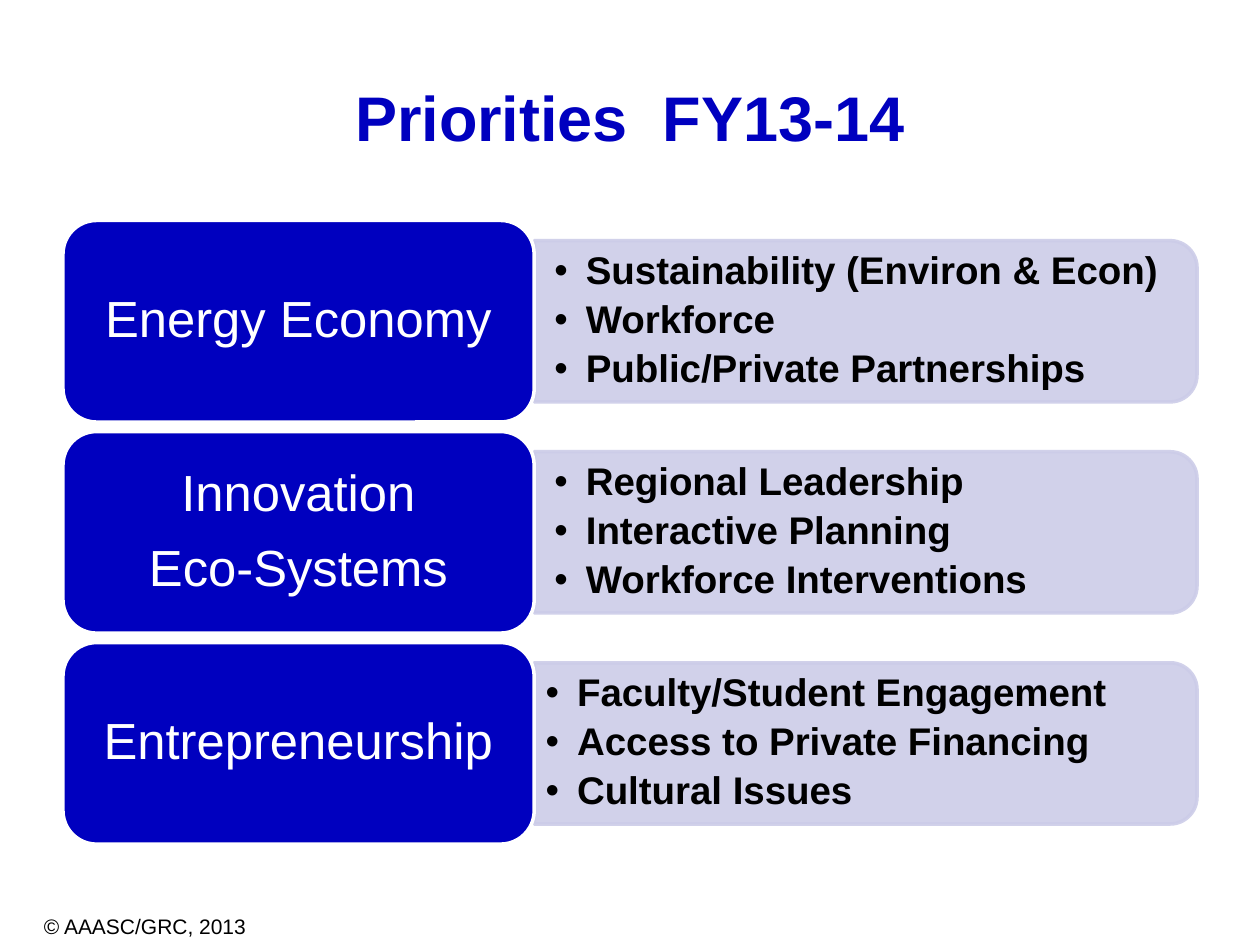
from pptx import Presentation
from pptx.dml.color import RGBColor
from pptx.enum.shapes import MSO_SHAPE as Preset
from pptx.enum.text import MSO_ANCHOR as Anchor, PP_ALIGN as Align
from pptx.oxml.ns import qn
from pptx.util import Inches, Pt
from lxml.etree import SubElement

BLUE, LILAC, WHITE, BLACK = "0000BF", "CCCCE8", "FFFFFF", "000000"
FIRST_TOP, PITCH = 1.75, 1.675
LABEL_LEFT, LABEL_WIDTH, LABEL_HEIGHT = 0.5, 3.74, 1.6
PANEL_WIDTH, PANEL_HEIGHT = 5.26, 1.28

PRIORITIES = [
    (["Energy Economy"],
     ["Sustainability (Environ & Econ)", "Workforce", "Public/Private Partnerships"],
     (0.16, 0.08)),
    (["Innovation", "Eco-Systems"],
     ["Regional Leadership", "Interactive Planning", "Workforce Interventions"],
     (0.16, 0.08)),
    (["Entrepreneurship"],
     ["Faculty/Student Engagement", "Access to Private Financing", "Cultural Issues"],
     (0.09, 0.05)),
]

TITLE_FONT = {"name": "Arial", "size": Pt(36), "bold": True}
LABEL_FONT = {"name": "Arial", "size": Pt(29), "bold": False}
LIST_FONT = {"name": "Arial", "size": Pt(22), "bold": True}
FOOTER_FONT = {"name": "Arial", "size": Pt(12), "bold": False}
LABEL_PARA = {"alignment": Align.CENTER, "line_spacing": 0.9, "space_after": Pt(11.7)}
LIST_PARA = {"alignment": Align.LEFT, "line_spacing": 0.9, "space_after": Pt(4.3)}


def color(value):
    return RGBColor.from_string(value)


def apply(target, values):
    for name, value in values.items():
        setattr(target, name, value)


def set_frame(frame, inset_x, inset_y, anchor=Anchor.MIDDLE, wrap=True):
    apply(frame, {
        "word_wrap": wrap, "vertical_anchor": anchor,
        "margin_left": Inches(inset_x), "margin_right": Inches(inset_x),
        "margin_top": Inches(inset_y), "margin_bottom": Inches(inset_y),
    })


def add_bullet(para):
    properties = para._p.get_or_add_pPr()
    properties.set("marL", str(Inches(0.25)))
    properties.set("indent", str(-Inches(0.25)))
    SubElement(properties, qn("a:buFont")).set("typeface", "Arial")
    SubElement(properties, qn("a:buChar")).set("char", "•")


def write(frame, lines, font, font_color, para_format, bullets=False):
    for number, line in enumerate(lines):
        para = frame.add_paragraph() if number else frame.paragraphs[0]
        if bullets:
            add_bullet(para)
        apply(para, para_format)
        span = para.add_run()
        span.text = line
        apply(span.font, font)
        span.font.color.rgb = color(font_color)


def add_block(page, preset, place, fill, line):
    block = page.shapes.add_shape(preset, *map(Inches, place))
    block.shadow.inherit = False
    block.fill.solid()
    block.fill.fore_color.rgb = color(fill)
    block.line.color.rgb = color(line)
    block.line.width = Pt(2)
    return block


def add_panel(page, middle):
    center = LABEL_LEFT + LABEL_WIDTH + PANEL_WIDTH / 2
    place = (center - PANEL_HEIGHT / 2, middle - PANEL_WIDTH / 2, PANEL_HEIGHT, PANEL_WIDTH)
    panel = add_block(page, Preset.ROUND_2_SAME_RECTANGLE, place, LILAC, LILAC)
    panel.rotation = 90
    for tint in panel._element.spPr.iter(qn("a:srgbClr")):
        SubElement(tint, qn("a:alpha")).set("val", "90000")


def add_list(page, middle, items, insets):
    place = (LABEL_LEFT + LABEL_WIDTH, middle - 1.15 / 2, 5.2, 1.15)
    box = page.shapes.add_textbox(*map(Inches, place))
    set_frame(box.text_frame, *insets)
    write(box.text_frame, items, LIST_FONT, BLACK, LIST_PARA, bullets=True)


def add_label(page, top, lines):
    place = (LABEL_LEFT, top, LABEL_WIDTH, LABEL_HEIGHT)
    label = add_block(page, Preset.ROUNDED_RECTANGLE, place, BLUE, WHITE)
    set_frame(label.text_frame, 0.12, 0.06)
    write(label.text_frame, lines, LABEL_FONT, WHITE, LABEL_PARA)


def add_title(page, text):
    title = page.shapes.title
    apply(title, {"left": Inches(0.5), "top": Inches(0.3),
                  "width": Inches(9), "height": Inches(1.25)})
    set_frame(title.text_frame, 0.1, 0.05)
    write(title.text_frame, [text], TITLE_FONT, BLUE, {"alignment": Align.CENTER})


def add_footer(page, text):
    box = page.shapes.add_textbox(Inches(0.25), Inches(7.2), Inches(1.82), Inches(0.3))
    set_frame(box.text_frame, 0.1, 0.05, Anchor.TOP, wrap=False)
    write(box.text_frame, [text], FOOTER_FONT, BLACK, {"alignment": Align.LEFT})


def main():
    deck = Presentation()
    apply(deck, {"slide_width": Inches(10), "slide_height": Inches(7.5)})
    page = deck.slides.add_slide(deck.slide_layouts[5])
    add_title(page, "Priorities  FY13-14")
    for row, (lines, items, insets) in enumerate(PRIORITIES):
        top = FIRST_TOP + row * PITCH
        middle = top + LABEL_HEIGHT / 2
        add_panel(page, middle)
        add_list(page, middle, items, insets)
        add_label(page, top, lines)
    add_footer(page, "© AAASC/GRC, 2013")
    deck.save("out.pptx")


if __name__ == "__main__":
    main()
